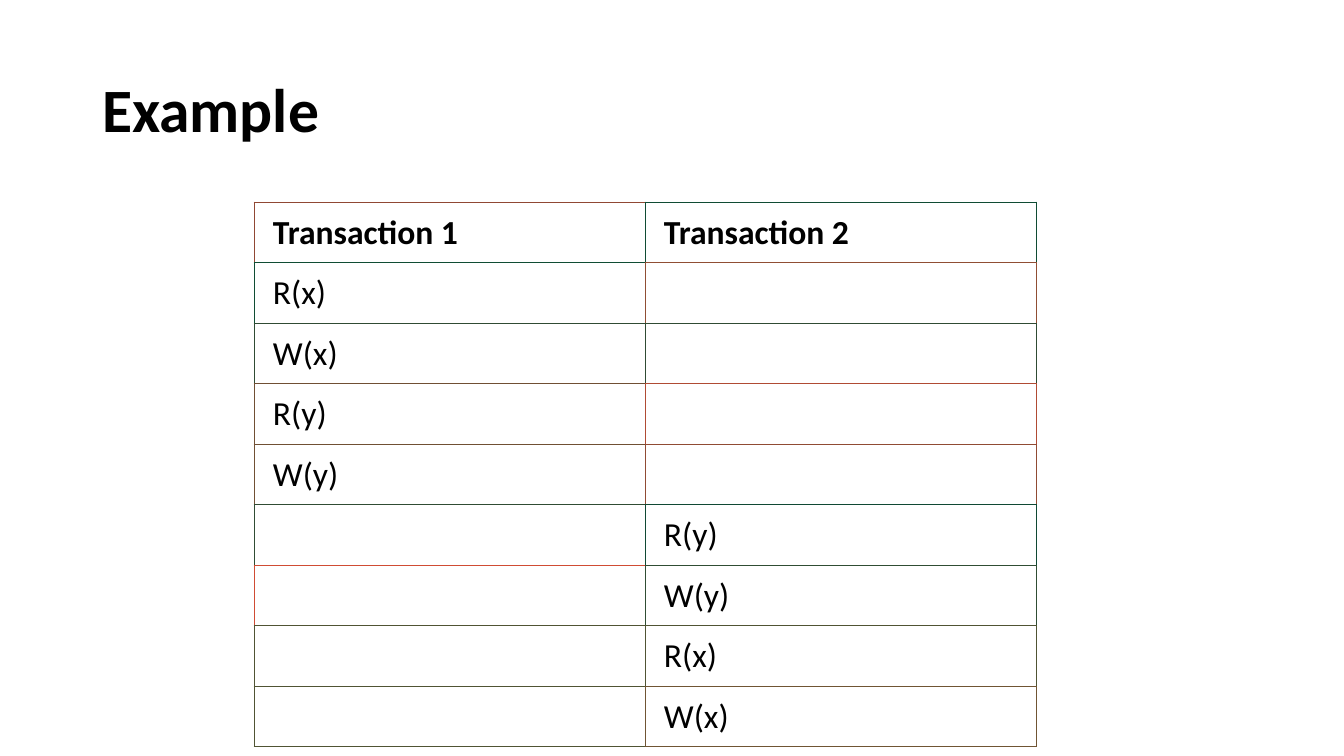
"""Build a slide with a table of two interleaved transactions."""
from lxml import etree
from pptx import Presentation
from pptx.dml.color import RGBColor
from pptx.enum.text import MSO_ANCHOR, PP_ALIGN
from pptx.oxml.ns import qn
from pptx.util import Emu, Pt

MIDDLE = MSO_ANCHOR.MIDDLE
LEFT = PP_ALIGN.LEFT
TITLE_ONLY = 5
SCALE = 914400 / 100.8
THEME = {
    "font": "Calibri",
    "ink": RGBColor.from_string("000000"),
    "paper": RGBColor.from_string("FFFFFF"),
    "title": Pt(44),
    "cell": Pt(24),
    "border": Pt(0.5),
}
SCHEDULE = [
    ("Transaction 1", "Transaction 2"),
    ("R(x)", ""),
    ("W(x)", ""),
    ("R(y)", ""),
    ("W(y)", ""),
    ("", "R(y)"),
    ("", "W(y)"),
    ("", "R(x)"),
    ("", "W(x)"),
]
BORDER_COLORS = [
    ("904834", "104C34"),
    ("104D34", "904E34"),
    ("304B34", "304B34"),
    ("704F34", "B04B34"),
    ("705034", "904B34"),
    ("304C34", "104934"),
    ("D04C34", "304D34"),
    ("505434", "505434"),
    ("505434", "705534"),
]
LAST_ROW = len(SCHEDULE) - 1
LAST_COLUMN = len(SCHEDULE[0]) - 1


def px(length):
    return Emu(round(length * SCALE))


def style_text(para, size, bold):
    para.alignment = LEFT
    for span in para.runs:
        span.font.name = THEME["font"]
        span.font.size = size
        span.font.bold = bold
        span.font.color.rgb = THEME["ink"]


deck = Presentation()
deck.slide_width, deck.slide_height = px(1344), px(756)
page = deck.slides.add_slide(deck.slide_layouts[TITLE_ONLY])
page.background.fill.solid()
page.background.fill.fore_color.rgb = THEME["paper"]

title = page.shapes.title
title.left, title.top, title.width, title.height = px(92), px(40), px(1159), px(146)
title.text_frame.text = "Example"
title.text_frame.vertical_anchor = MIDDLE
title_para = title.text_frame.paragraphs[0]
title_para.line_spacing = 0.9
style_text(title_para, THEME["title"], True)

table = page.shapes.add_table(
    len(SCHEDULE), len(SCHEDULE[0]), px(254), px(202), px(782), px(545)
).table
table.first_row = False
table.horz_banding = False

for row, entries in enumerate(SCHEDULE):
    for column, entry in enumerate(entries):
        cell = table.cell(row, column)
        cell.text = entry
        cell.vertical_anchor = MIDDLE
        cell.margin_left = cell.margin_right = px(19)
        cell.margin_top, cell.margin_bottom = px(10), px(9)
        style_text(cell.text_frame.paragraphs[0], THEME["cell"], row == 0)

        own_color = BORDER_COLORS[row][column]
        edges = {
            "a:lnL": own_color,
            "a:lnR": BORDER_COLORS[row][min(column + 1, LAST_COLUMN)],
            "a:lnT": own_color,
            "a:lnB": BORDER_COLORS[min(row + 1, LAST_ROW)][column],
        }
        properties = cell._tc.get_or_add_tcPr()
        for tag, color in edges.items():
            line = etree.SubElement(properties, qn(tag), w=str(THEME["border"]))
            fill = etree.SubElement(line, qn("a:solidFill"))
            etree.SubElement(fill, qn("a:srgbClr"), val=color)
        cell.fill.solid()
        cell.fill.fore_color.rgb = THEME["paper"]

deck.save("out.pptx")
